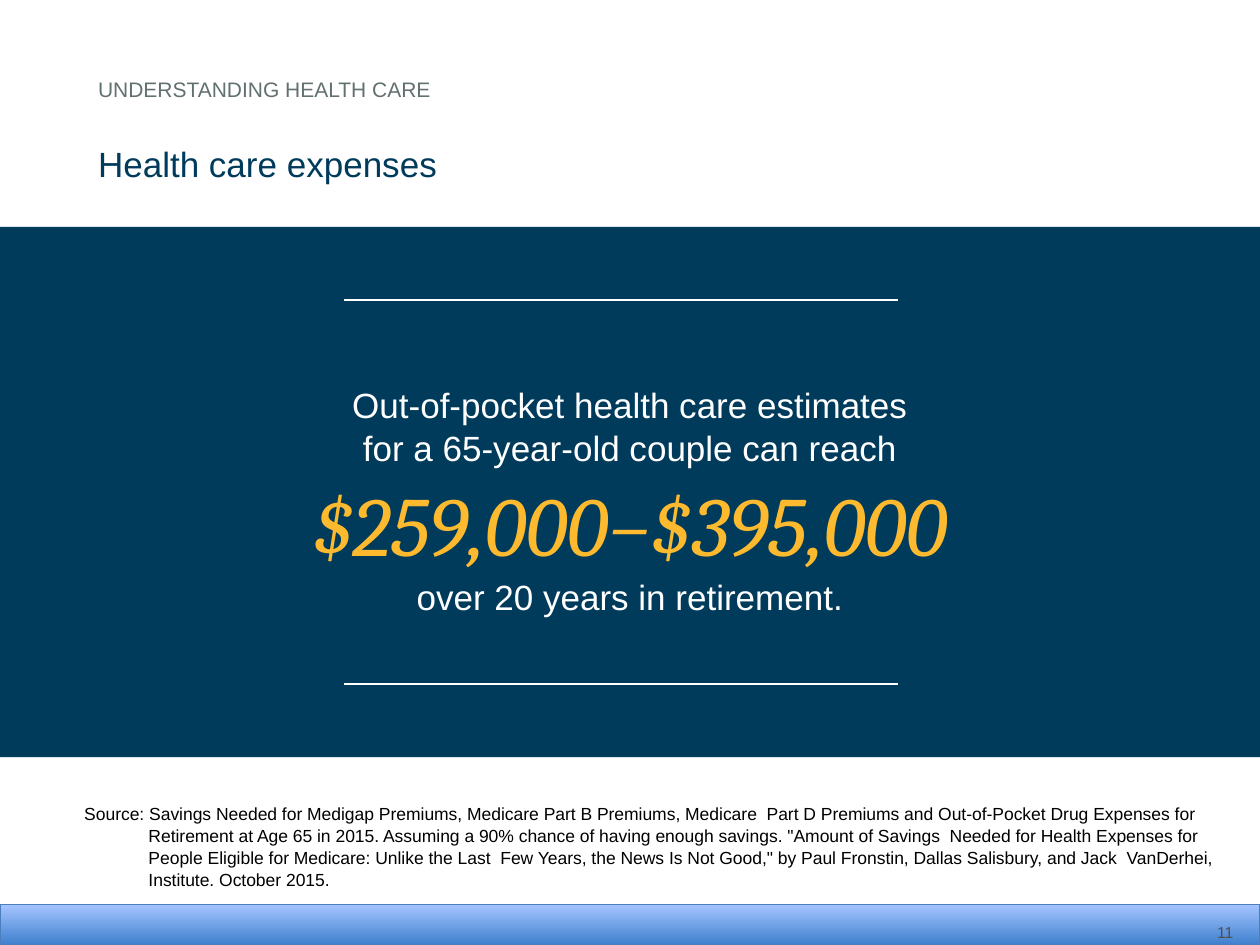
from dataclasses import dataclass

from lxml.etree import SubElement
from pptx import Presentation
from pptx.dml.color import RGBColor
from pptx.enum.shapes import MSO_CONNECTOR, MSO_SHAPE
from pptx.enum.text import MSO_ANCHOR, PP_ALIGN
from pptx.oxml.ns import qn
from pptx.util import Inches, Pt


@dataclass(frozen=True)
class Theme:
    sans: str = "Arial"
    serif: str = "Cambria"
    navy: str = "003B5C"
    gold: str = "FDBA2E"
    white: str = "FFFFFF"
    black: str = "000000"
    gray: str = "62706F"
    page_gray: str = "4D4F53"
    bar_dark: str = "3F80CE"
    bar_light: str = "A4C4FF"
    bar_edge: str = "4B7EBC"
    figure: int = 48
    title: int = 20
    section: int = 12
    source: int = 10
    page: int = 9


T = Theme()


@dataclass(frozen=True)
class Line:
    text: str
    size: int
    color: str
    font: str = T.sans
    italic: bool = False


@dataclass(frozen=True)
class TextBox:
    left: float
    top: float
    width: float
    height: float
    lines: tuple[Line, ...]
    align: PP_ALIGN = PP_ALIGN.LEFT
    anchor: MSO_ANCHOR = MSO_ANCHOR.TOP
    bottom: float = 0.05
    right: float = 0.1
    hanging: float = 0
    spacing: float = 1.0


def rgb(value: str) -> RGBColor:
    return RGBColor.from_string(value)


def add_text(s, box: TextBox) -> None:
    sp = s.shapes.add_textbox(*map(Inches, (box.left, box.top, box.width, box.height)))
    tf = sp.text_frame
    tf.word_wrap = True
    tf.vertical_anchor = box.anchor
    tf.margin_bottom, tf.margin_right = Inches(box.bottom), Inches(box.right)
    for i, line in enumerate(box.lines):
        p = tf.add_paragraph() if i else tf.paragraphs[0]
        p.text = line.text
        p.alignment = box.align
        p.line_spacing = box.spacing
        p.font.name, p.font.size = line.font, Pt(line.size)
        p.font.italic = line.italic
        p.font.color.rgb = rgb(line.color)
        if box.hanging:
            pPr = p._p.get_or_add_pPr()
            pPr.set("marL", str(Inches(box.hanging)))
            pPr.set("indent", str(-Inches(box.hanging)))


def add_band(s, top: float, height: float):
    sp = s.shapes.add_shape(MSO_SHAPE.RECTANGLE, 0, Inches(top), Inches(10), Inches(height))
    sp.shadow.inherit = False
    return sp


def add_rule(s, y: float) -> None:
    rule = s.shapes.add_connector(
        MSO_CONNECTOR.STRAIGHT, Inches(2.73), Inches(y), Inches(7.13), Inches(y))
    rule.line.color.rgb = rgb(T.white)
    rule.line.width = Pt(1.25)
    SubElement(rule._element.spPr, qn("a:effectLst"))


SECTION = TextBox(0.68, 0.23, 8.66, 0.58,
                  (Line("UNDERSTANDING HEALTH CARE", T.section, T.gray),),
                  anchor=MSO_ANCHOR.BOTTOM, bottom=0)
TITLE = TextBox(0.68, 1.08, 8.66, 0.78, (Line("Health care expenses", T.title, T.navy),))
SOURCE = TextBox(0.57, 6.32, 9.58, 0.77, (Line(
    "Source: Savings Needed for Medigap Premiums, Medicare Part B Premiums, "
    "Medicare  Part D Premiums and Out-of-Pocket Drug Expenses for\v"
    "Retirement at Age 65 in 2015. Assuming a 90% chance of having enough savings. "
    "\"Amount of Savings  Needed for Health Expenses for\v"
    "People Eligible for Medicare: Unlike the Last  Few Years, the News Is Not Good,\" "
    "by Paul Fronstin, Dallas Salisbury, and Jack  VanDerhei,\v"
    "Institute. October 2015.", T.source, T.black),), hanging=0.51, spacing=1.04)
ESTIMATE = TextBox(0.5, 2.98, 9, 2.22, (
    Line("Out-of-pocket health care estimates", T.title, T.white),
    Line("for a 65-year-old couple can reach", T.title, T.white),
    Line("$259,000−$395,000", T.figure, T.gold, T.serif, True),
    Line("over 20 years in retirement.", T.title, T.white),
), align=PP_ALIGN.CENTER, spacing=1.04)
PAGE = TextBox(7.46, 7.24, 2.33, 0.26, (Line("11", T.page, T.page_gray),),
               align=PP_ALIGN.RIGHT, anchor=MSO_ANCHOR.MIDDLE, bottom=0, right=0)


def main() -> None:
    prs = Presentation()
    prs.slide_width, prs.slide_height = Inches(10), Inches(7.5)
    s = prs.slides.add_slide(prs.slide_layouts[6])

    # Navy panel
    panel = add_band(s, 1.8, 4.21)
    panel.fill.solid()
    panel.fill.fore_color.rgb = rgb(T.navy)
    panel.line.fill.background()

    # Headings, source and estimate
    for box in (SECTION, TITLE, SOURCE, ESTIMATE):
        add_text(s, box)
    for y in (2.38, 5.43):
        add_rule(s, y)

    # Footer bar, dark at the bottom
    footer = add_band(s, 7.18, 0.32)
    footer.fill.gradient()
    footer.fill.gradient_angle = 90
    for stop, color in zip(footer.fill.gradient_stops, (T.bar_dark, T.bar_light)):
        stop.color.rgb = rgb(color)
    footer.line.color.rgb = rgb(T.bar_edge)
    footer.line.width = Pt(0.75)
    add_text(s, PAGE)

    prs.save("out.pptx")


if __name__ == "__main__":
    main()
